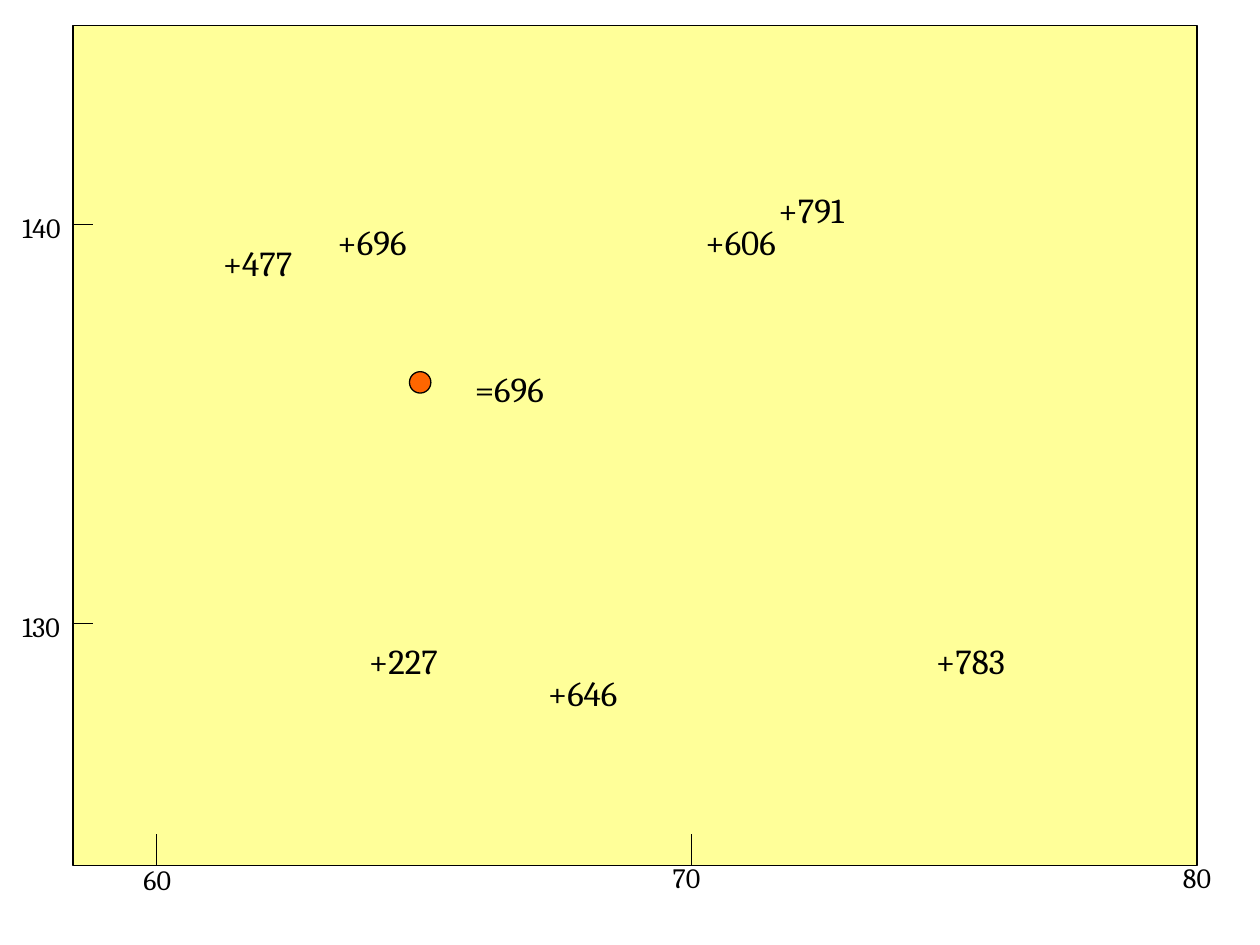
from dataclasses import dataclass, field

from lxml import etree
from pptx import Presentation
from pptx.dml.color import RGBColor
from pptx.enum.shapes import MSO_CONNECTOR as CONN, MSO_SHAPE as SHAPE
from pptx.enum.text import MSO_AUTO_SIZE as FIT
from pptx.oxml.ns import qn
from pptx.slide import Slide
from pptx.util import Inches, Pt

COLORS = {"ink": "000000", "field": "FFFF99", "marker": "FF6600"}


@dataclass
class MapSlide:
    s: Slide
    font: str = "Cambria"
    line_width: float = 0.75
    colors: dict = field(default_factory=lambda: COLORS)

    def rgb(self, name):
        return RGBColor.from_string(self.colors[name])

    def outline(self, line):
        line.color.rgb = self.rgb("ink")
        line.width = Pt(self.line_width)

    def shape(self, kind, x, y, w, h, fill):
        sp = self.s.shapes.add_shape(kind, Inches(x), Inches(y), Inches(w), Inches(h))
        sp.shadow.inherit = False
        sp.fill.solid()
        sp.fill.fore_color.rgb = self.rgb(fill)
        self.outline(sp.line)

    def tick(self, x1, y1, x2, y2):
        cx = self.s.shapes.add_connector(
            CONN.STRAIGHT, Inches(x1), Inches(y1), Inches(x2), Inches(y2))
        self.outline(cx.line)
        etree.SubElement(cx._element.spPr, qn("a:effectLst"))

    def label(self, text, x, y, w, h, size):
        sp = self.s.shapes.add_textbox(Inches(x), Inches(y), Inches(w), Inches(h))
        tf = sp.text_frame
        tf.word_wrap = False
        tf.auto_size = FIT.SHAPE_TO_FIT_TEXT
        r = tf.paragraphs[0].add_run()
        r.text = text
        r.font.name = self.font
        r.font.size = Pt(size)
        r.font.color.rgb = self.rgb("ink")


def main():
    prs = Presentation()
    prs.slide_width, prs.slide_height = Inches(10), Inches(7.5)
    m = MapSlide(prs.slides.add_slide(prs.slide_layouts[6]))

    left, top, width, height = 0.58, 0.2, 8.92, 6.67
    bottom = top + height
    m.shape(SHAPE.RECTANGLE, left, top, width, height, "field")

    for text, y in (("140", 1.78), ("130", 4.95)):
        m.tick(left, y, left + 0.16, y)
        m.label(text, 0.08, y - 0.16, 0.53, 0.37, 16)

    for x in (1.24, 5.49):
        m.tick(x, bottom, x, bottom - 0.25)
    for text, x, y in (("60", 1.04, 6.8), ("70", 5.24, 6.78), ("80", 9.29, 6.78)):
        m.label(text, x, y, 0.42, 0.37, 16)

    m.shape(SHAPE.OVAL, 3.25, 2.95, 0.17, 0.17, "marker")

    readings = (
        ("+477", 1.67, 1.87), ("+696", 2.58, 1.7), ("+227", 2.83, 5.03),
        ("+646", 4.25, 5.28), ("+606", 5.5, 1.7), ("+791", 6.08, 1.45),
        ("+783", 7.33, 5.03), ("=696", 3.67, 2.87),
    )
    for text, x, y in readings:
        m.label(text, x, y, 0.77, 0.43, 20)

    prs.save("out.pptx")


if __name__ == "__main__":
    main()
